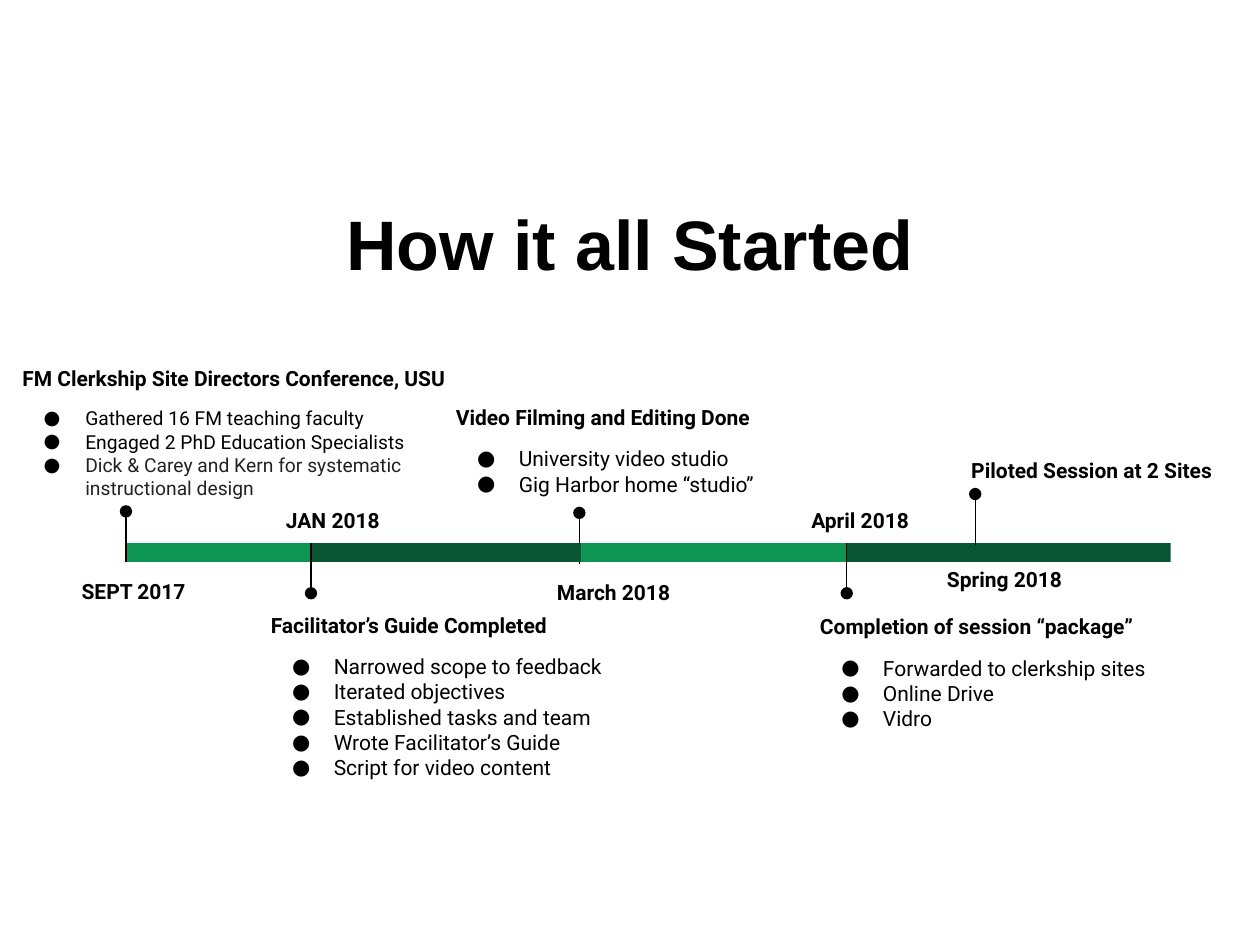
"""Build a slide with a pinned timeline of how the project started."""
from dataclasses import dataclass

from lxml.etree import SubElement
from pptx import Presentation
from pptx.dml.color import RGBColor
from pptx.enum.shapes import MSO_CONNECTOR, MSO_SHAPE
from pptx.enum.text import MSO_ANCHOR, PP_ALIGN
from pptx.oxml.ns import qn
from pptx.shapes.autoshape import Shape
from pptx.slide import Slide
from pptx.text.text import TextFrame, _Paragraph
from pptx.util import Cm, Pt

BLACK = RGBColor(0x00, 0x00, 0x00)
GRAY = RGBColor(0x22, 0x22, 0x22)
LIGHT = RGBColor(0x0E, 0x94, 0x53)
DARK = RGBColor(0x08, 0x56, 0x31)
BODY = "Roboto"
BAR_TOP, BAR_HIGH = 10.95, 0.38
PIN, DOT = 1.02, 0.25


@dataclass(frozen=True)
class Box:
    left: float
    top: float
    width: float
    height: float


@dataclass(frozen=True)
class Point:
    text: str
    color: RGBColor = BLACK


@dataclass(frozen=True)
class Event:
    date: str
    date_box: Box
    head: str
    note_box: Box
    pin_x: float
    dot_y: float
    points: tuple[Point, ...] = ()
    size: int = 12
    bar: float = 0
    color: RGBColor = LIGHT


EVENTS = (
    Event("March 2018", Box(10.77, 11.35, 3.2, 0.99),
          "Video Filming and Editing Done", Box(8.94, 7.9, 7.16, 2.31),
          11.68, 10.34,
          (Point("University video studio"), Point("Gig Harbor home “studio”")),
          bar=5.44),
    Event("April 2018", Box(16.03, 9.91, 2.62, 1.04),
          "Completion of session “package”", Box(16.28, 12.12, 7.85, 2.62),
          17.07, 11.96,
          (Point("Forwarded to clerkship sites"), Point("Online Drive"),
           Point("Vidro")),
          bar=6.53, color=DARK),
    Event("SEPT 2017", Box(1.35, 11.33, 2.69, 1.04),
          "FM Clerkship Site Directors Conference, USU",
          Box(0.2, 7.11, 9.45, 3.07), 2.54, 10.31,
          (Point("Gathered 16 FM teaching faculty"),
           Point("Engaged 2 PhD Education Specialists"),
           Point("Dick & Carey and Kern for systematic instructional design",
                 GRAY)),
          size=11, bar=5.44),
    Event("JAN 2018", Box(5.26, 9.91, 2.9, 1.04),
          "Facilitator’s Guide Completed", Box(5.21, 12.09, 7.57, 3.53),
          6.27, 11.96,
          (Point("Narrowed scope to feedback"), Point("Iterated objectives"),
           Point("Established tasks and team"),
           Point("Wrote Facilitator’s Guide"),
           Point("Script for video content")),
          bar=5.44, color=DARK),
    Event("Spring 2018", Box(18.69, 11.1, 3.12, 1.04),
          "Piloted Session at 2 Sites", Box(19.33, 8.97, 6.3, 0.99),
          19.66, 9.96),
)


def place(shape: Shape, box: Box) -> None:
    shape.left, shape.top = Cm(box.left), Cm(box.top)
    shape.width, shape.height = Cm(box.width), Cm(box.height)


def add_run(para: _Paragraph, text: str, size: int, bold: bool = True,
            color: RGBColor = BLACK, face: str = BODY) -> None:
    run = para.add_run()
    run.text = text
    run.font.name = face
    run.font.size = Pt(size)
    run.font.bold = bold
    run.font.color.rgb = color


def set_frame(frame: TextFrame) -> None:
    frame.word_wrap = True
    frame.vertical_anchor = MSO_ANCHOR.TOP
    frame.margin_left = frame.margin_right = Cm(0.25)
    frame.margin_top = frame.margin_bottom = Cm(0.25)


def add_box(slide: Slide, box: Box) -> TextFrame:
    shape = slide.shapes.add_textbox(0, 0, 0, 0)
    place(shape, box)
    set_frame(shape.text_frame)
    return shape.text_frame


def add_shape(slide: Slide, kind: MSO_SHAPE, box: Box, color: RGBColor) -> None:
    shape = slide.shapes.add_shape(kind, 0, 0, 0, 0)
    place(shape, box)
    shape.shadow.inherit = False
    shape.fill.solid()
    shape.fill.fore_color.rgb = color
    shape.line.fill.background()


def add_pin(slide: Slide, x: float, y: float) -> None:
    end = y + PIN if y < BAR_TOP else y - PIN
    line = slide.shapes.add_connector(
        MSO_CONNECTOR.STRAIGHT, Cm(x), Cm(y), Cm(x), Cm(end))
    line.line.color.rgb = BLACK
    line.line.width = Pt(0.75)
    SubElement(line._element.spPr, qn("a:effectLst"))
    add_shape(slide, MSO_SHAPE.OVAL,
              Box(x - DOT / 2, y - DOT / 2, DOT, DOT), BLACK)


def add_bullet(para: _Paragraph) -> None:
    props = para._p.get_or_add_pPr()
    props.set("marL", str(Cm(1.27)))
    props.set("indent", str(-Cm(0.84)))
    tint = SubElement(props, qn("a:buClr"))
    SubElement(tint, qn("a:srgbClr")).set("val", str(BLACK))
    SubElement(props, qn("a:buFont")).set("typeface", BODY)
    SubElement(props, qn("a:buChar")).set("char", "●")


def add_event(slide: Slide, event: Event) -> None:
    if event.bar:
        add_shape(slide, MSO_SHAPE.RECTANGLE,
                  Box(event.pin_x, BAR_TOP, event.bar, BAR_HIGH), event.color)
    add_pin(slide, event.pin_x, event.dot_y)

    date = add_box(slide, event.date_box).paragraphs[0]
    date.alignment = PP_ALIGN.CENTER
    date.line_spacing = 1.15
    add_run(date, event.date, 12)

    note = add_box(slide, event.note_box)
    add_run(note.paragraphs[0], event.head, 12)
    for rank, point in enumerate(event.points):
        para = note.add_paragraph()
        if rank == 0:
            para.space_before = Pt(9.4)
        add_bullet(para)
        add_run(para, point.text, event.size, False, point.color)


def add_title(slide: Slide, text: str) -> None:
    title = slide.shapes.title
    place(title, Box(0.86, 3.61, 23.67, 1.6))
    set_frame(title.text_frame)
    title.text_frame.margin_top = Cm(0.43)
    para = title.text_frame.paragraphs[0]
    para.alignment = PP_ALIGN.CENTER
    add_run(para, text, 40, face="Arial")


def main() -> None:
    deck = Presentation()
    deck.slide_width, deck.slide_height = Cm(25.4), Cm(19.05)
    slide = deck.slides.add_slide(deck.slide_layouts[5])
    add_title(slide, "How it all Started")
    for event in EVENTS:
        add_event(slide, event)
    deck.save("out.pptx")


if __name__ == "__main__":
    main()
